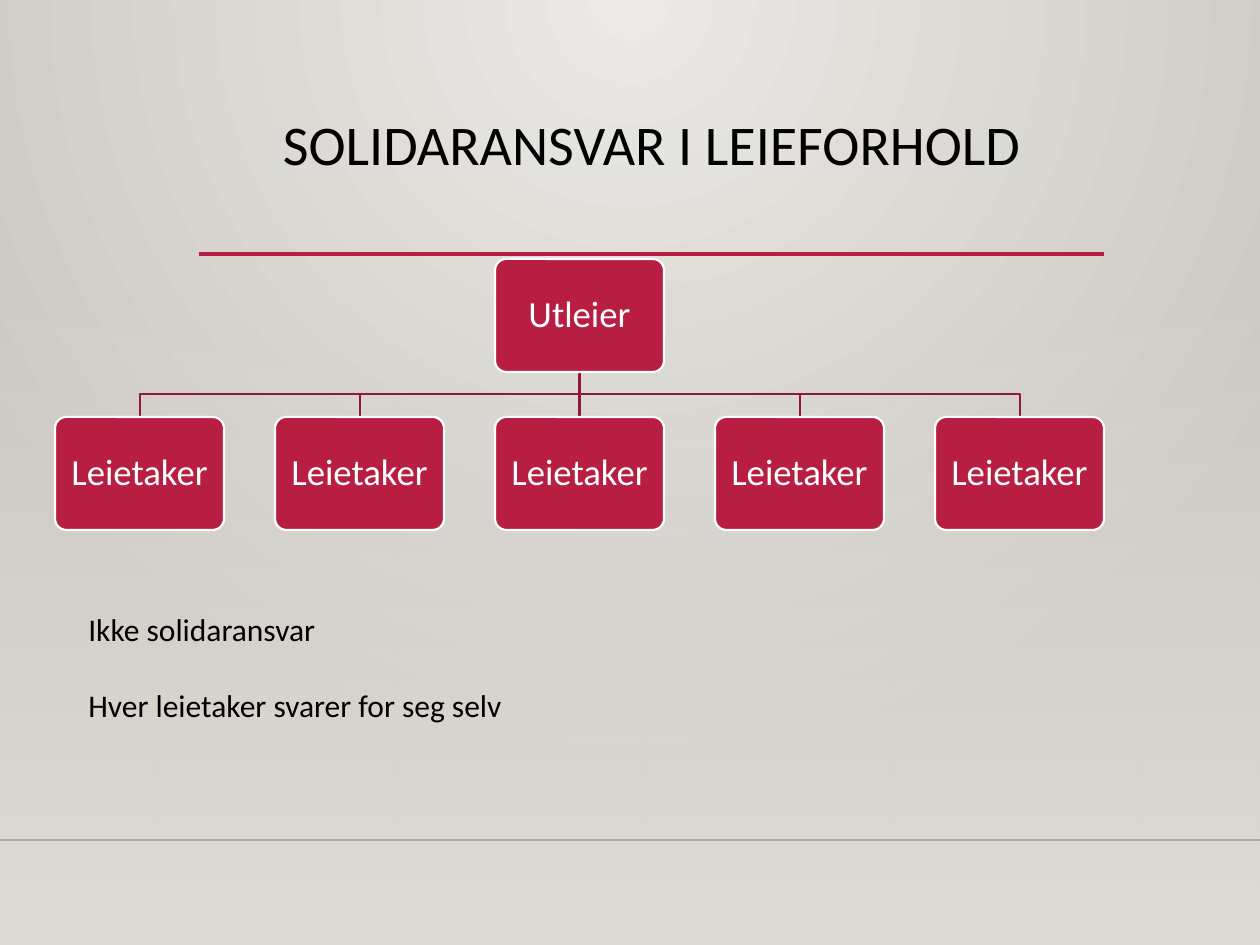
from pptx import Presentation
from pptx.dml.color import RGBColor
from pptx.enum.shapes import MSO_CONNECTOR as LINE, MSO_SHAPE as SHAPE
from pptx.enum.text import MSO_ANCHOR as ANCHOR, PP_ALIGN as ALIGN
from pptx.oxml import parse_xml
from pptx.oxml.ns import nsdecls, qn
from pptx.util import Pt
from lxml.etree import SubElement

TITLE = "SOLIDARANSVAR I LEIEFORHOLD"
OWNER = "Utleier"
TENANTS = ["Leietaker"] * 5
NOTES = ["Ikke solidaransvar", "Hver leietaker svarer for seg selv"]

PX = 9144000 / 1260
WIDE, HIGH = 1260, 945
BOX_W, BOX_H = 169, 113
LEFT, STEP = 55, 220
OWNER_Y, TENANT_Y = 259, 417
FONT = "Calibri"

RED = RGBColor(0xB7, 0x1E, 0x42)
DARK = RGBColor(0x93, 0x18, 0x35)
WHITE = RGBColor(0xFF, 0xFF, 0xFF)
BLACK = RGBColor(0, 0, 0)
PALE = RGBColor(0xEC, 0xEA, 0xE7)
GREY = RGBColor(0xCA, 0xC7, 0xC1)
SAND = RGBColor(0xDF, 0xDB, 0xD5)

RADIAL = '<a:path path="circle"><a:fillToRect l="43000" r="43000" b="100000"/></a:path>'
DOWN = '<a:lin ang="5400000" scaled="0"/>'


def emu(*vals):
    return [round(v * PX) for v in vals]


def shade(fill, host, stops, way):
    """Give host a gradient of (color, alpha percent) stops, running the given way."""
    fill.gradient()
    old = next(host.iter(qn("a:gradFill")))
    last = len(stops) - 1
    marks = "".join(
        f'<a:gs pos="{100000 * i // last}"><a:srgbClr val="{color}">'
        f'<a:alpha val="{alpha * 1000}"/></a:srgbClr></a:gs>'
        for i, (color, alpha) in enumerate(stops))
    new = parse_xml(f'<a:gradFill {nsdecls("a")} rotWithShape="1">'
                    f'<a:gsLst>{marks}</a:gsLst>{way}</a:gradFill>')
    old.getparent().replace(old, new)


def rule(x1, y1, x2, y2, color, width):
    line = shapes.add_connector(LINE.STRAIGHT, *emu(x1, y1, x2, y2))
    line.line.color.rgb = color
    line.line.width = Pt(width)
    SubElement(line.element.spPr, qn("a:effectLst"))
    return line


def style(par, size, color):
    par.font.name = FONT
    par.font.size = Pt(size)
    par.font.color.rgb = color


def center(par):
    par.alignment = ALIGN.CENTER
    par.line_spacing = 0.9


def box(x, y, name):
    card = shapes.add_shape(SHAPE.ROUNDED_RECTANGLE, *emu(x, y, BOX_W, BOX_H))
    card.adjustments[0] = 0.1
    card.shadow.inherit = False
    card.fill.solid()
    card.fill.fore_color.rgb = RED
    card.line.color.rgb = WHITE
    card.line.width = Pt(1.25)
    frame = card.text_frame
    frame.word_wrap = True
    frame.vertical_anchor = ANCHOR.MIDDLE
    frame.margin_left = frame.margin_right = emu(11)[0]
    par = frame.paragraphs[0]
    par.text = name
    center(par)
    style(par, 21, WHITE)


def link(x1, y1, x2, y2):
    """Join two boxes, bending halfway down unless one is right below the other."""
    if x1 == x2:
        rule(x1, y1, x2, y2, DARK, 1.25)
        return
    mid = (y1 + y2) / 2
    pen = shapes.build_freeform(x1, y1, scale=PX)
    pen.add_line_segments([(x1, mid), (x2, mid), (x2, y2)], close=False)
    bend = pen.convert_to_shape()
    bend.shadow.inherit = False
    bend.fill.background()
    bend.line.color.rgb = DARK
    bend.line.width = Pt(1.25)


deck = Presentation()
deck.slide_width, deck.slide_height = emu(WIDE, HIGH)
slide = deck.slides.add_slide(deck.slide_layouts[6])
shapes = slide.shapes

shade(slide.background.fill, slide.element, [(PALE, 100), (GREY, 100)], RADIAL)
floor = shapes.add_shape(SHAPE.RECTANGLE, *emu(0, 277, WIDE, HIGH - 277))
floor.shadow.inherit = False
floor.line.fill.background()
shade(floor.fill, floor.element, [(SAND, 0), (SAND, 100)], DOWN)

foot = rule(0, 840, WIDE, 840, BLACK, 1)
tint = next(foot.element.spPr.iter(qn("a:srgbClr")))
SubElement(tint, qn("a:alpha"), val="20000")
rule(199, 254, 1104, 254, RED, 2.5)

title = shapes.add_textbox(*emu(199, 111, 906, 144)).text_frame
title.word_wrap = True
head = title.paragraphs[0]
head.text = TITLE
center(head)
style(head, 32, BLACK)

owner_x = LEFT + STEP * (len(TENANTS) // 2)
half = BOX_W / 2
for i, name in enumerate(TENANTS):
    x = LEFT + STEP * i
    link(owner_x + half, OWNER_Y + BOX_H, x + half, TENANT_Y)
    box(x, TENANT_Y, name)
box(owner_x, OWNER_Y, OWNER)

notes = shapes.add_textbox(*emu(76, 604, 451, 165)).text_frame
notes.word_wrap = False
for i, text in enumerate(NOTES):
    par = notes.add_paragraph() if i else notes.paragraphs[0]
    par.text = text
    par.space_before = Pt(22 if i else 0)
    style(par, 18, BLACK)

deck.save("out.pptx")
